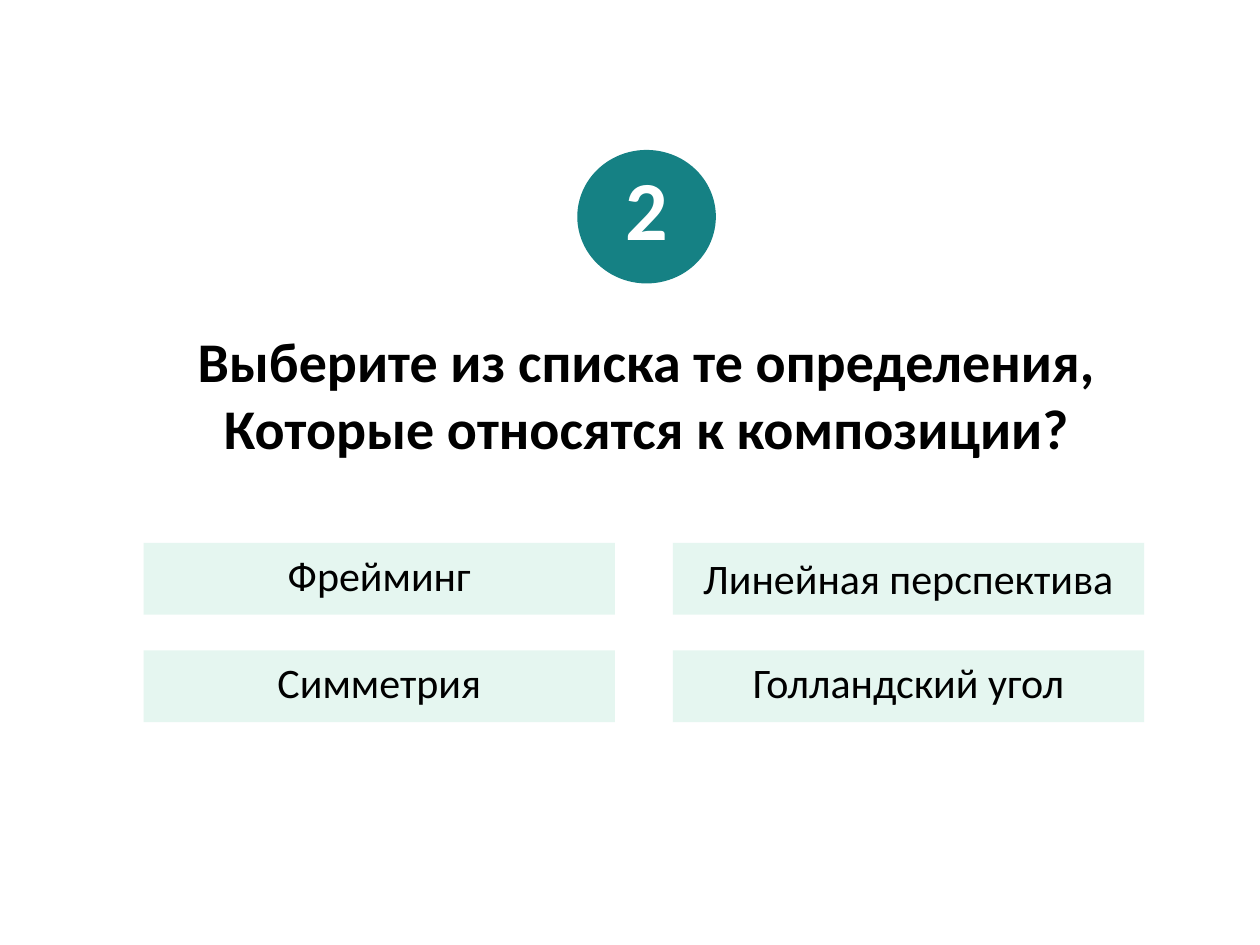
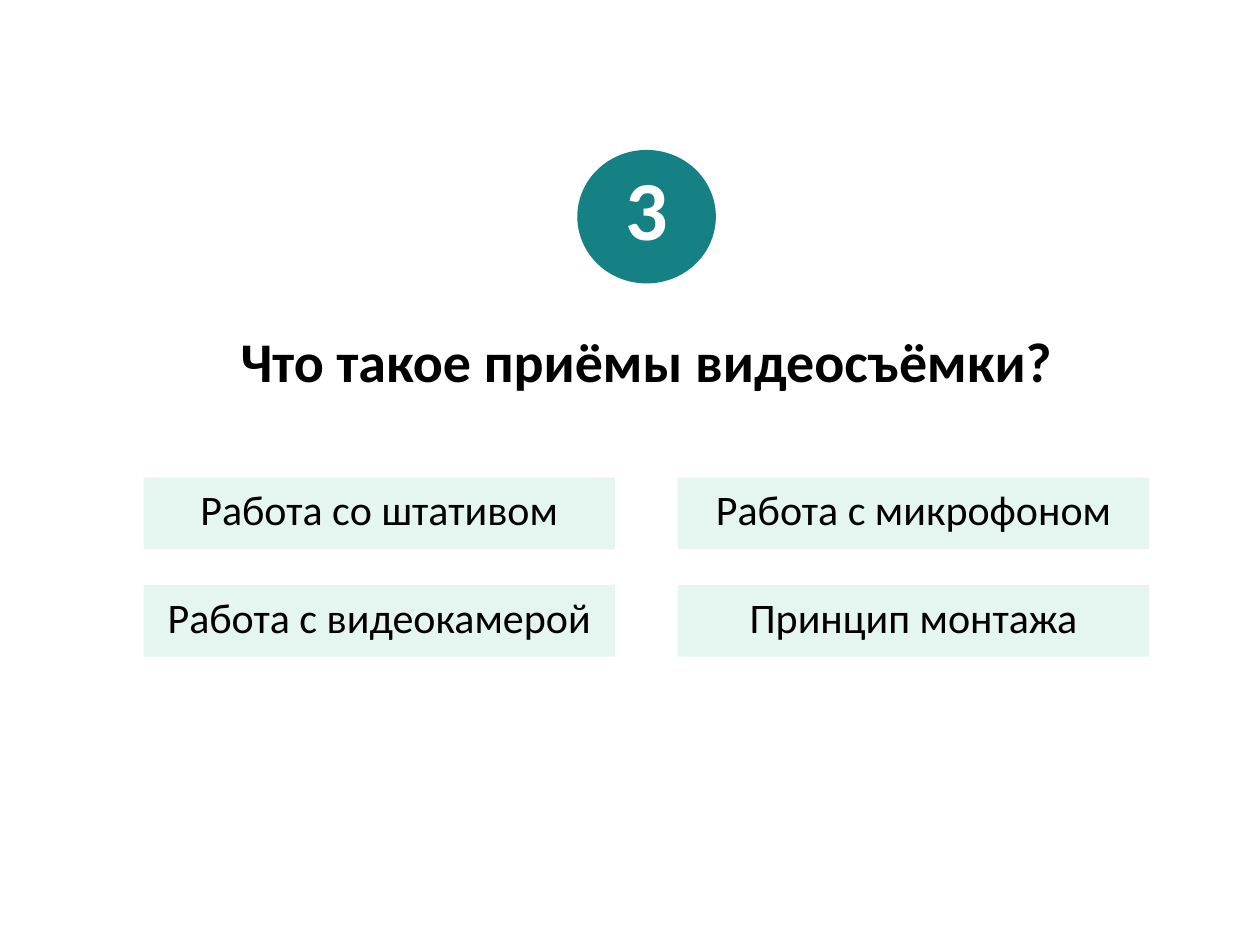
from pptx import Presentation
from pptx.dml.color import RGBColor
from pptx.enum.shapes import MSO_SHAPE
from pptx.enum.text import MSO_ANCHOR, MSO_AUTO_SIZE, PP_ALIGN
from pptx.util import Pt

# Answers run row by row; "nudge" lowers the text of single answers.
QUESTIONS = [
    {
        "number": "2",
        "lines": ["Выберите из списка те определения,",
                  "Которые относятся к композиции?"],
        "title_width": 532.8,
        "answers": ["Фрейминг", "Линейная перспектива",
                    "Симметрия", "Голландский угол"],
        "answers_top": 310.3,
        "column_step": 302.4,
        "nudge": {"Линейная перспектива": 2},
    },
    {
        "number": "3",
        "lines": ["Что такое приёмы видеосъёмки?"],
        "title_width": 483.1,
        "answers": ["Работа со штативом", "Работа с микрофоном",
                    "Работа с видеокамерой", "Принцип монтажа"],
        "answers_top": 272.9,
        "column_step": 305.3,
        "nudge": {},
    },
]

TEAL = RGBColor(0x15, 0x81, 0x84)
MINT = RGBColor(0xE5, 0xF6, 0xF0)
WHITE = RGBColor(0xFF, 0xFF, 0xFF)
BLACK = RGBColor(0, 0, 0)

NUMBER_FONT = {"name": "Calibri", "size": Pt(48), "bold": True}
TITLE_FONT = {"name": "Calibri", "size": Pt(32), "bold": True}
ANSWER_FONT = {"name": "Calibri", "size": Pt(24), "bold": False}

CENTER_X = 369.5
BADGE_TOP, BADGE_W, BADGE_H = 85.7, 79.2, 76.3
TITLE_TOP, LINE_H = 182.9, 38.9
INSET = 3.6
ANSWER_LEFT, ANSWER_W, ANSWER_H, ROW_STEP = 82.1, 269.3, 41, 61.4


def write(sp, lines, font, color, anchor, top=INSET, bottom=INSET):
    """Fill a shape with centred, unwrapped lines; top and bottom are insets."""
    tf = sp.text_frame
    frame = {"word_wrap": False, "auto_size": MSO_AUTO_SIZE.NONE,
             "vertical_anchor": anchor,
             "margin_top": Pt(top), "margin_bottom": Pt(bottom)}
    for key, value in frame.items():
        setattr(tf, key, value)
    tf.text = "\n".join(lines)
    for p in tf.paragraphs:
        p.alignment = PP_ALIGN.CENTER
        r = p.runs[0]
        for key, value in font.items():
            setattr(r.font, key, value)
        r.font.color.rgb = color


def add_filled(slide, kind, left, top, width, height, color):
    sp = slide.shapes.add_shape(kind, Pt(left), Pt(top), Pt(width), Pt(height))
    sp.shadow.inherit = False
    sp.fill.solid()
    sp.fill.fore_color.rgb = color
    sp.line.fill.background()
    return sp


def add_question(prs, question):
    slide = prs.slides.add_slide(prs.slide_layouts[5])

    badge = add_filled(slide, MSO_SHAPE.OVAL, CENTER_X - BADGE_W / 2, BADGE_TOP,
                       BADGE_W, BADGE_H, TEAL)
    write(badge, [question["number"]], NUMBER_FONT, WHITE,
          MSO_ANCHOR.MIDDLE, top=0, bottom=10.8)

    title, width = slide.shapes.title, question["title_width"]
    title.left, title.top = Pt(CENTER_X - width / 2), Pt(TITLE_TOP)
    title.width = Pt(width)
    title.height = Pt(2 * INSET + LINE_H * len(question["lines"]))
    write(title, question["lines"], TITLE_FONT, BLACK, MSO_ANCHOR.TOP)

    for i, answer in enumerate(question["answers"]):
        row, col = divmod(i, 2)
        card = add_filled(slide, MSO_SHAPE.RECTANGLE,
                          ANSWER_LEFT + col * question["column_step"],
                          question["answers_top"] + row * ROW_STEP,
                          ANSWER_W, ANSWER_H, MINT)
        write(card, [answer], ANSWER_FONT, BLACK, MSO_ANCHOR.TOP,
              top=INSET + question["nudge"].get(answer, 0))


def main():
    prs = Presentation()
    prs.slide_width, prs.slide_height = Pt(720), Pt(540)
    for question in QUESTIONS:
        add_question(prs, question)
    prs.save("out.pptx")


if __name__ == "__main__":
    main()
